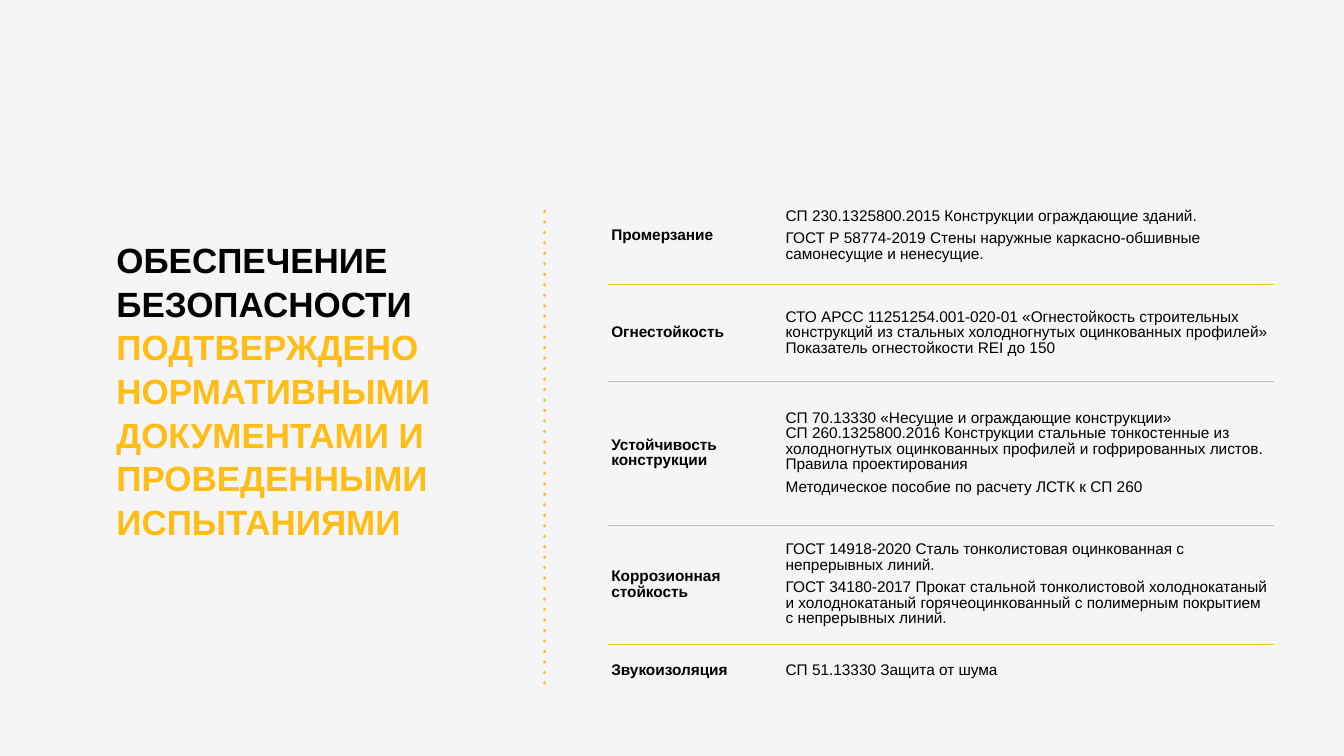
from dataclasses import dataclass
from lxml import etree
from pptx import Presentation
from pptx.dml.color import RGBColor
from pptx.enum.shapes import MSO_CONNECTOR
from pptx.enum.text import MSO_ANCHOR
from pptx.oxml.ns import qn
from pptx.util import Inches, Pt

STRAIGHT = MSO_CONNECTOR.STRAIGHT
MIDDLE = MSO_ANCHOR.MIDDLE
PAD = Inches(0.06)


@dataclass(frozen=True)
class Theme:
    font: str = "Arial"
    back: str = "F5F4F6"
    ink: str = "000000"
    gold: str = "FFBD16"
    grey: str = "BFBFBF"
    title: int = 50
    body: int = 22


THEME = Theme()

TITLE = [
    ("ОБЕСПЕЧЕНИЕ БЕЗОПАСНОСТИ", THEME.ink),
    ("ПОДТВЕРЖДЕНО НОРМАТИВНЫМИ ДОКУМЕНТАМИ И ПРОВЕДЕННЫМИ ИСПЫТАНИЯМИ",
     THEME.gold),
]

# Label, row height, rule below, and paragraphs as (text, space before)
ROWS = [
    ("Промерзание", 1.93, THEME.gold, [
        ("СП 230.1325800.2015 Конструкции ограждающие зданий.", 0),
        ("ГОСТ Р 58774-2019 Стены наружные каркасно-обшивные "
         "самонесущие и ненесущие.", 10)]),
    ("Огнестойкость", 1.93, THEME.grey, [
        ("СТО АРСС 11251254.001-020-01 «Огнестойкость строительных "
         "конструкций из стальных холодногнутых оцинкованных профилей»", 0),
        ("Показатель огнестойкости REI до 150", 0)]),
    ("Устойчивость конструкции", 2.85, THEME.grey, [
        ("СП 70.13330 «Несущие и ограждающие конструкции»", 0),
        ("СП 260.1325800.2016 Конструкции стальные тонкостенные из "
         "холодногнутых оцинкованных профилей и гофрированных листов. "
         "Правила проектирования", 0),
        ("Методическое пособие по расчету ЛСТК к СП 260", 10)]),
    ("Коррозионная стойкость", 2.36, THEME.gold, [
        ("ГОСТ 14918-2020 Сталь тонколистовая оцинкованная с "
         "непрерывных линий.", 0),
        ("ГОСТ 34180-2017 Прокат стальной тонколистовой холоднокатаный и "
         "холоднокатаный горячеоцинкованный с полимерным покрытием с "
         "непрерывных линий.", 10)]),
    ("Звукоизоляция", 1.05, None, [("СП 51.13330 Защита от шума", 0)]),
]


def style(para, size, color, bold):
    for run in para.runs:
        run.font.name = THEME.font
        run.font.size = Pt(size)
        run.font.bold = bold
        run.font.color.rgb = RGBColor.from_string(color)


def pad(item):
    item.margin_left = item.margin_right = PAD
    item.margin_top = item.margin_bottom = PAD


def add_title(slide, left, top, width, height):
    box = slide.shapes.add_textbox(*map(Inches, (left, top, width, height)))
    frame = box.text_frame
    frame.word_wrap = True
    pad(frame)
    frame.text = "\n".join(text for text, _ in TITLE)
    for para, (_, color) in zip(frame.paragraphs, TITLE):
        para.line_spacing = 1.04
        style(para, THEME.title, color, True)


def add_dots(slide, left, top, height):
    line = slide.shapes.add_connector(
        STRAIGHT, *map(Inches, (left, top + height, left, top)))
    line.line.width = Pt(5)
    line.line.color.rgb = RGBColor.from_string(THEME.gold)
    props = line._element.spPr
    stroke = props.find(qn("a:ln"))
    stroke.set("cap", "rnd")
    dash = etree.SubElement(stroke, qn("a:custDash"))
    etree.SubElement(dash, qn("a:ds"), d="100000", sp="200000")
    etree.SubElement(stroke, qn("a:round"))
    etree.SubElement(props, qn("a:effectLst"))


def set_rules(cell, above, below):
    sides = {"lnL": None, "lnR": None, "lnT": above, "lnB": below}
    props = cell._tc.get_or_add_tcPr()
    for spot, (side, color) in enumerate(sides.items()):
        edge = etree.Element(qn(f"a:{side}"), w=str(Pt(1)))
        if color:
            fill = etree.SubElement(edge, qn("a:solidFill"))
            etree.SubElement(fill, qn("a:srgbClr"), val=color)
        else:
            etree.SubElement(edge, qn("a:noFill"))
        props.insert(spot, edge)


def fill_cell(cell, paras, bold, above, below):
    cell.fill.background()
    cell.vertical_anchor = MIDDLE
    pad(cell)
    cell.text_frame.text = "\n".join(text for text, _ in paras)
    for para, (_, gap) in zip(cell.text_frame.paragraphs, paras):
        para.line_spacing = 0.9
        para.space_before = Pt(gap)
        style(para, THEME.body, THEME.ink, bold)
    set_rules(cell, above, below)


def add_norms(slide, left, top, width, height):
    table = slide.shapes.add_table(
        len(ROWS), 2, *map(Inches, (left, top, width, height))).table
    table.first_row = table.horz_banding = False
    label_width = 3.46
    table.columns[0].width = Inches(label_width)
    table.columns[1].width = Inches(width - label_width)
    above = None
    for index, (label, tall, below, paras) in enumerate(ROWS):
        table.rows[index].height = Inches(tall)
        fill_cell(table.cell(index, 0), [(label, 0)], True, above, below)
        fill_cell(table.cell(index, 1), paras, False, above, below)
        above = below


def main():
    deck = Presentation()
    deck.slide_width, deck.slide_height = Inches(26.67), Inches(15)
    slide = deck.slides.add_slide(deck.slide_layouts[6])
    slide.background.fill.solid()
    slide.background.fill.fore_color.rgb = RGBColor.from_string(THEME.back)
    add_title(slide, 2.25, 4.64, 9.37, 5.73)
    add_norms(slide, 12.07, 3.71, 13.21, 10.12)
    add_dots(slide, 10.8, 3.99, 9.56)
    deck.save("out.pptx")


if __name__ == "__main__":
    main()
